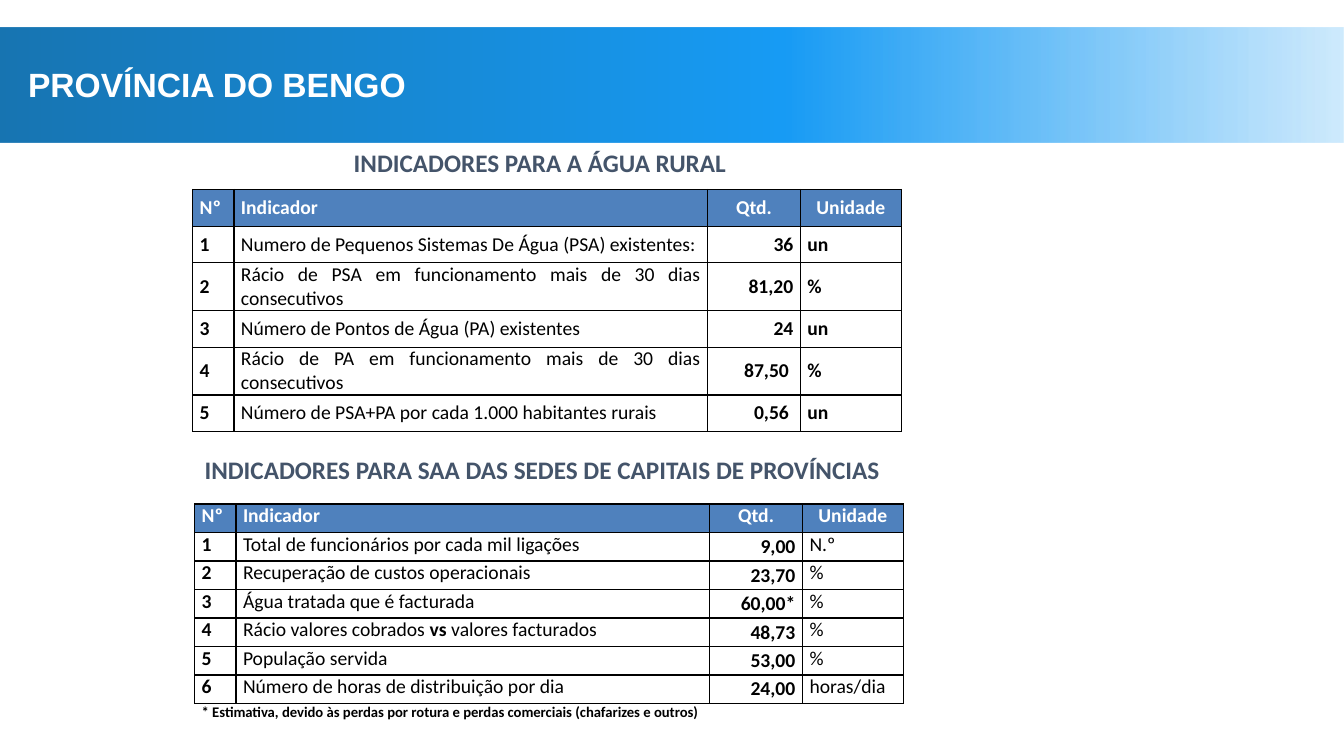
"""Build the slide of water supply indicators for the province of Bengo."""
from copy import deepcopy
from dataclasses import dataclass

from lxml import etree
from pptx import Presentation
from pptx.dml.color import RGBColor
from pptx.enum.shapes import MSO_SHAPE
from pptx.enum.text import MSO_ANCHOR, PP_ALIGN
from pptx.oxml.ns import qn
from pptx.util import Inches, Pt

RECTANGLE = MSO_SHAPE.RECTANGLE
TOP, MIDDLE = MSO_ANCHOR.TOP, MSO_ANCHOR.MIDDLE
CENTER, RIGHT, JUSTIFY = PP_ALIGN.CENTER, PP_ALIGN.RIGHT, PP_ALIGN.JUSTIFY
SLIDE_WIDTH, SLIDE_HEIGHT = Inches(13.33), Inches(7.5)
COLUMN_SHARES = (3.08, 35.25, 6.9, 7.5)
HEADERS = ("Nº", "Indicador", "Qtd.", "Unidade")
HEADER_ALIGNMENTS = (JUSTIFY, JUSTIFY, CENTER, CENTER)
BODY_ALIGNMENTS = (JUSTIFY, JUSTIFY, RIGHT, JUSTIFY)
QUANTITY_COLUMN = 2


@dataclass(frozen=True)
class Theme:
    white: str = "FFFFFF"
    black: str = "000000"
    heading: str = "44546A"
    header_fill: str = "4F81BD"
    band_stops: tuple = ((0, "1774B1", 100), (58, "179BF4", 100), (100, "179BF4", 20))
    title_font: str = "Arial"
    body_font: str = "Calibri"
    title_size: float = 24
    heading_size: float = 18
    table_size: float = 14
    note_size: float = 10.5
    border_width: float = 1
    cell_margin: float = 0.07


THEME = Theme()


@dataclass(frozen=True)
class Box:
    """Position and size in percent of the slide."""
    left: float
    top: float
    width: float
    height: float

    def lengths(self) -> tuple:
        return across(self.left), down(self.top), across(self.width), down(self.height)


@dataclass(frozen=True)
class Label:
    text: str
    box: Box
    font: str
    size: float
    color: str


@dataclass(frozen=True)
class Indicator:
    name: str
    quantity: str
    unit: str
    emphasis: str = ""


@dataclass(frozen=True)
class IndicatorTable:
    left: float
    top: float
    row_share: float
    anchor: MSO_ANCHOR
    bold_unit: bool
    indicators: tuple
    note: str = ""
    note_share: float = 0


LABELS = (
    Label("INDICADORES PARA A ÁGUA RURAL", Box(25.58, 18.8, 31.05, 5.33),
          THEME.body_font, THEME.heading_size, THEME.heading),
    Label("INDICADORES PARA SAA DAS SEDES DE CAPITAIS DE PROVÍNCIAS",
          Box(14.48, 59.47, 53.33, 5.33), THEME.body_font, THEME.heading_size, THEME.heading),
    Label("PROVÍNCIA DO BENGO", Box(1.35, 7.73, 50.18, 6.67),
          THEME.title_font, THEME.title_size, THEME.white),
)
TABLES = (
    IndicatorTable(14.33, 25.07, 4.85, MIDDLE, True, (
        Indicator("Numero de Pequenos Sistemas De Água (PSA) existentes:", "36", "un"),
        Indicator("Rácio de PSA em funcionamento mais de 30 dias consecutivos", "81,20", "%"),
        Indicator("Número de Pontos de Água (PA) existentes", "24", "un"),
        Indicator("Rácio de PA em funcionamento mais de 30 dias consecutivos", "87,50 ", "%"),
        Indicator("Número de PSA+PA por cada 1.000 habitantes rurais", "0,56 ", "un"),
    )),
    IndicatorTable(14.48, 66.67, 3.77, TOP, False, (
        Indicator("Total de funcionários por cada mil ligações", "9,00", "N.º"),
        Indicator("Recuperação de custos operacionais", "23,70", "%"),
        Indicator("Água tratada que é facturada", "60,00*", "%"),
        Indicator("Rácio valores cobrados vs valores facturados", "48,73", "%", "vs "),
        Indicator("População servida", "53,00", "%"),
        Indicator("Número de horas de distribuição por dia", "24,00", "horas/dia"),
    ), "* Estimativa, devido às perdas por rotura e perdas comerciais (chafarizes e outros)", 3.07),
)


def across(share: float) -> int:
    return round(SLIDE_WIDTH * share / 100)


def down(share: float) -> int:
    return round(SLIDE_HEIGHT * share / 100)


def style_font(font, name: str, size: float, color: str, bold: bool) -> None:
    font.name, font.size, font.bold = name, Pt(size), bold
    font.color.rgb = RGBColor.from_string(color)


def draw_band(slide, box: Box) -> None:
    shape = slide.shapes.add_shape(RECTANGLE, *box.lengths())
    shape.shadow.inherit = False
    shape.line.fill.background()
    shape.fill.gradient()
    shape.fill.gradient_angle = 0
    stop_list = shape.fill._fill._gradFill.find(qn("a:gsLst"))
    for stop in list(stop_list):
        stop_list.remove(stop)
    for position, color, opacity in THEME.band_stops:
        stop = etree.SubElement(stop_list, qn("a:gs"), pos=str(position * 1000))
        value = etree.SubElement(stop, qn("a:srgbClr"), val=color)
        if opacity < 100:
            etree.SubElement(value, qn("a:alpha"), val=str(opacity * 1000))


def draw_label(slide, label: Label) -> None:
    text_frame = slide.shapes.add_textbox(*label.box.lengths()).text_frame
    text_frame.word_wrap = True
    text_frame.text = label.text
    style_font(text_frame.paragraphs[0].runs[0].font, label.font, label.size, label.color, True)


def set_borders(cell, visible: str) -> None:
    properties = cell._tc.get_or_add_tcPr()
    for side in "LRTB":
        line = etree.SubElement(properties, qn(f"a:ln{side}"), w=str(Pt(THEME.border_width)))
        if side in visible:
            fill = etree.SubElement(line, qn("a:solidFill"))
            etree.SubElement(fill, qn("a:srgbClr"), val=THEME.black)
        else:
            etree.SubElement(line, qn("a:noFill"))


def prepare_cell(cell, anchor: MSO_ANCHOR, fill: str = "", borders: str = "LRTB") -> None:
    set_borders(cell, borders)
    cell.vertical_anchor = anchor
    cell.margin_left = cell.margin_right = Inches(THEME.cell_margin)
    cell.margin_top = cell.margin_bottom = 0
    if fill:
        cell.fill.solid()
        cell.fill.fore_color.rgb = RGBColor.from_string(fill)
    else:
        cell.fill.background()


def write_cell(cell, text: str, alignment: PP_ALIGN, color: str, bold: bool,
               size: float = THEME.table_size, emphasis: str = "") -> None:
    paragraph = cell.text_frame.paragraphs[0]
    paragraph.alignment = alignment
    pieces = text.partition(emphasis) if emphasis else (text,)
    for piece in pieces:
        run = paragraph.add_run()
        run.text = piece
        style_font(run.font, THEME.body_font, size, color, bold or piece == emphasis)


def draw_table(slide, content: IndicatorTable) -> None:
    body_rows = len(content.indicators) + 1
    row_shares = [content.row_share] * body_rows + [content.note_share] * bool(content.note)
    box = Box(content.left, content.top, sum(COLUMN_SHARES), sum(row_shares))
    table = slide.shapes.add_table(len(row_shares), len(HEADERS), *box.lengths()).table
    table.first_row = table.horz_banding = False
    for column, share in zip(table.columns, COLUMN_SHARES):
        column.width = across(share)
    for row, share in zip(table.rows, row_shares):
        row.height = down(share)
    for cell, text, alignment in zip(table.rows[0].cells, HEADERS, HEADER_ALIGNMENTS):
        prepare_cell(cell, content.anchor, THEME.header_fill)
        write_cell(cell, text, alignment, THEME.white, True)
    bold_columns = (True, False, True, content.bold_unit)
    for number, item in enumerate(content.indicators, 1):
        texts = (str(number), item.name, item.quantity, item.unit)
        for column, text in enumerate(texts):
            cell = table.cell(number, column)
            prepare_cell(cell, MIDDLE if column == QUANTITY_COLUMN else content.anchor)
            write_cell(cell, text, BODY_ALIGNMENTS[column], THEME.black, bold_columns[column],
                       emphasis=item.emphasis if column == 1 else "")
    if content.note:
        note_cells = list(table.rows[body_rows].cells)
        for cell in note_cells:
            prepare_cell(cell, content.anchor, borders="T")
        note_cells[0].merge(note_cells[-1])
        write_cell(note_cells[0], content.note, JUSTIFY, THEME.black, True, THEME.note_size)


def main() -> None:
    presentation = Presentation()
    presentation.slide_width, presentation.slide_height = SLIDE_WIDTH, SLIDE_HEIGHT
    slide = presentation.slides.add_slide(presentation.slide_layouts[6])
    for content in TABLES:
        draw_table(slide, content)
    draw_band(slide, Box(0, 3.6, 100, 15.2))
    for label in LABELS:
        draw_label(slide, label)
    presentation.save("out.pptx")


if __name__ == "__main__":
    main()
